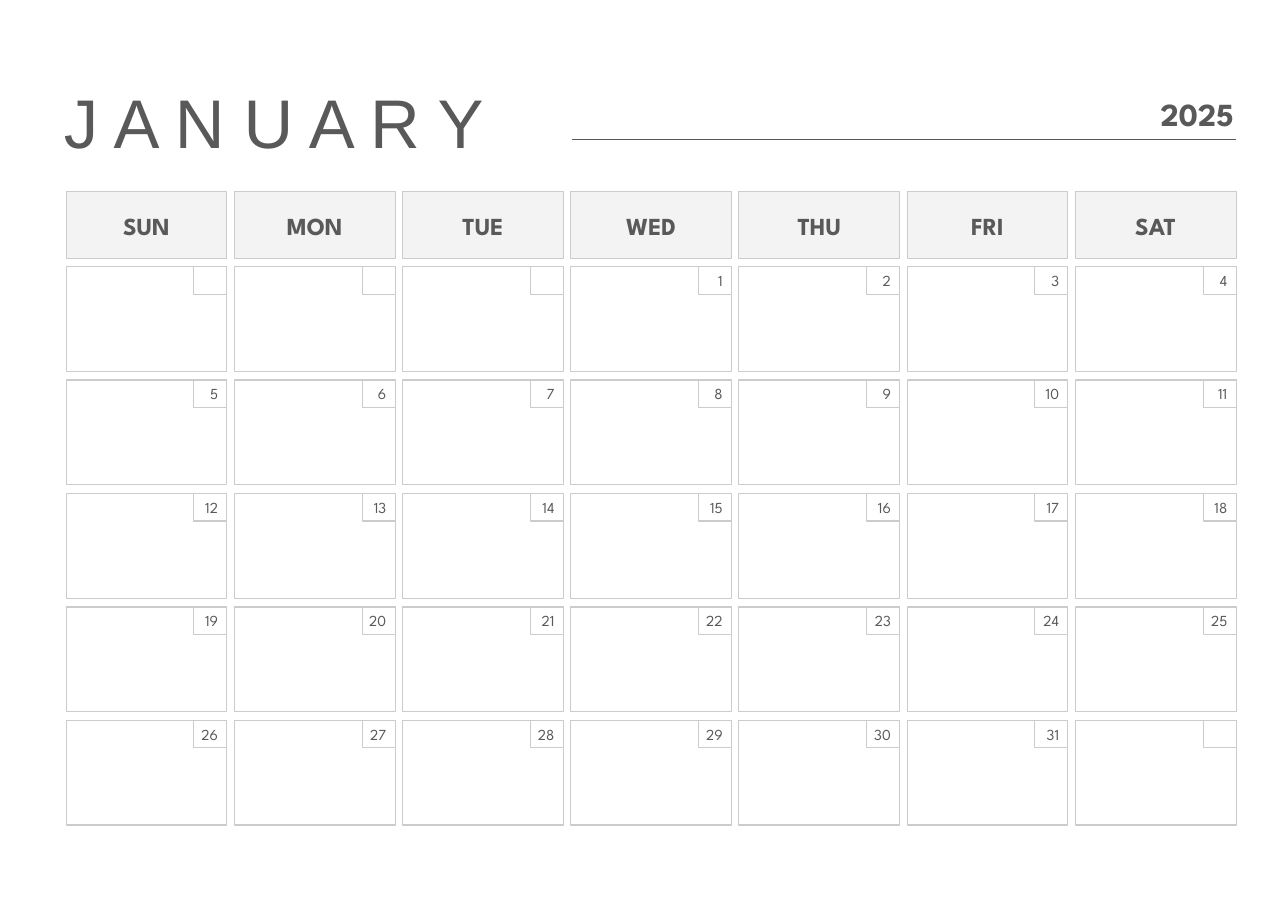
from dataclasses import dataclass
from typing import Optional

from lxml.etree import SubElement
from pptx import Presentation
from pptx.dml.color import RGBColor
from pptx.enum.shapes import MSO_CONNECTOR, MSO_SHAPE
from pptx.enum.text import MSO_ANCHOR, MSO_AUTO_SIZE, PP_ALIGN
from pptx.oxml.ns import qn
from pptx.util import Inches, Pt

COLORS = {"text": "595959", "edge": "CCCCCC", "head": "F3F3F3", "cell": "FFFFFF"}
DAYS = ["SUN", "MON", "TUE", "WED", "THU", "FRI", "SAT"]
WEEKS = 5
FIRST = 3  # column of the 1st: Wednesday
LAST = 31

LEFT, RIGHT = 0.6, 11.22
WIDTH, HEIGHT = 1.46, 0.95
STEP_X = (RIGHT - WIDTH - LEFT) / (len(DAYS) - 1)
TOP, STEP_Y = 2.42, 1.03
HEAD_TOP, HEAD_HEIGHT = 1.74, 0.61
TAB_WIDTH, TAB_HEIGHT = 0.3, 0.25
RULE_LEFT, RULE_TOP = 5.19, 1.27


@dataclass(frozen=True)
class Style:
    size: float
    font: str = "League Spartan"
    bold: bool = False
    align: PP_ALIGN = PP_ALIGN.RIGHT
    anchor: MSO_ANCHOR = MSO_ANCHOR.MIDDLE
    inset: tuple[float, float, float, float] = (0, 0, 0, 0)
    fit: MSO_AUTO_SIZE = MSO_AUTO_SIZE.NONE
    spacing: float = 1.0


@dataclass(frozen=True)
class Box:
    left: float
    top: float
    width: float
    height: float
    fill: Optional[str] = None
    edge: Optional[str] = None
    kind: MSO_SHAPE = MSO_SHAPE.RECTANGLE


MONTH = Style(45, "Arial", align=PP_ALIGN.LEFT, anchor=MSO_ANCHOR.TOP,
              fit=MSO_AUTO_SIZE.SHAPE_TO_FIT_TEXT, spacing=1.08)
YEAR = Style(21, bold=True)
HEAD = Style(16, bold=True, align=PP_ALIGN.CENTER, inset=(0.1, 0.1, 0.1, 0.1))
DATE = Style(10, inset=(0, 0.04, 0.08, 0.04))


def color(name: str) -> RGBColor:
    return RGBColor.from_string(COLORS[name])


def write(shape, text: str, style: Style) -> None:
    frame = shape.text_frame
    frame.word_wrap = True
    frame.auto_size = style.fit
    frame.vertical_anchor = style.anchor
    (frame.margin_left, frame.margin_top,
     frame.margin_right, frame.margin_bottom) = map(Inches, style.inset)
    para = frame.paragraphs[0]
    para.alignment = style.align
    para.line_spacing = style.spacing
    run = para.add_run()
    run.text = text
    run.font.size = Pt(style.size)
    run.font.name = style.font
    run.font.bold = style.bold
    run.font.color.rgb = color("text")


def draw(shapes, box: Box, text: str = "", style: Style = DATE) -> None:
    shape = shapes.add_shape(box.kind, Inches(box.left), Inches(box.top),
                             Inches(box.width), Inches(box.height))
    shape.shadow.inherit = False
    if box.fill:
        shape.fill.solid()
        shape.fill.fore_color.rgb = color(box.fill)
    else:
        shape.fill.background()
    if box.edge:
        shape.line.color.rgb = color(box.edge)
        shape.line.width = Pt(0.75)
    else:
        shape.line.fill.background()
    if text:
        write(shape, text, style)


def add_title(slide) -> None:
    title = slide.shapes.title
    title.left, title.top = Inches(0.58), Inches(0.66)
    title.width, title.height = Inches(4.55), Inches(0.76)
    write(title, "J A N U A R Y", MONTH)


def add_grid(slide) -> None:
    grid = slide.shapes.add_group_shape().shapes
    for col, day in enumerate(DAYS):
        draw(grid, Box(LEFT + col * STEP_X, HEAD_TOP, WIDTH, HEAD_HEIGHT,
                       "head", "edge"), day, HEAD)
    for slot in range(WEEKS * len(DAYS)):
        row, col = divmod(slot, len(DAYS))
        draw(grid, Box(LEFT + col * STEP_X, TOP + row * STEP_Y, WIDTH, HEIGHT,
                       "cell", "edge"))


def add_dates(slide) -> None:
    tabs = slide.shapes.add_group_shape().shapes
    for slot in range(WEEKS * len(DAYS)):
        row, col = divmod(slot, len(DAYS))
        date = slot - FIRST + 1
        left = LEFT + col * STEP_X + WIDTH - TAB_WIDTH
        draw(tabs, Box(left, TOP + row * STEP_Y, TAB_WIDTH, TAB_HEIGHT, edge="edge"),
             str(date) if 1 <= date <= LAST else "")


def add_rule(slide) -> None:
    rule = slide.shapes.add_connector(MSO_CONNECTOR.STRAIGHT, Inches(RULE_LEFT),
                                      Inches(RULE_TOP), Inches(RIGHT), Inches(RULE_TOP))
    rule.line.color.rgb = color("text")
    rule.line.width = Pt(0.75)
    SubElement(rule.line._get_or_add_ln().getparent(), qn("a:effectLst"))


def main() -> None:
    deck = Presentation()
    deck.slide_width, deck.slide_height = Inches(11.69), Inches(8.27)
    slide = deck.slides.add_slide(deck.slide_layouts[5])
    add_title(slide)
    draw(slide.shapes, Box(10, 0.79, 1.22, 0.48, kind=MSO_SHAPE.ROUNDED_RECTANGLE),
         "2025", YEAR)
    add_grid(slide)
    add_dates(slide)
    add_rule(slide)
    deck.save("out.pptx")


if __name__ == "__main__":
    main()
